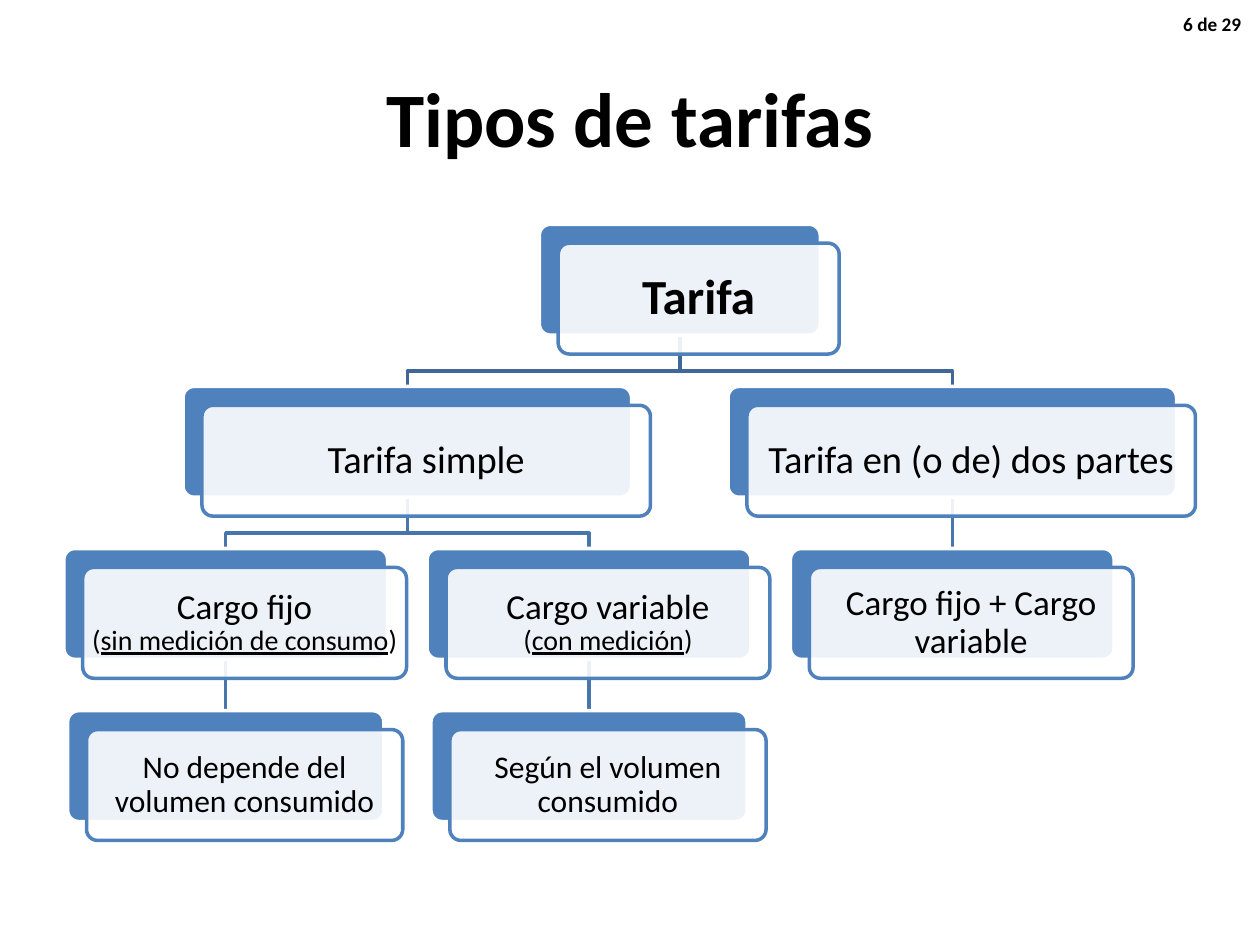
from collections import namedtuple

from lxml import etree
from pptx import Presentation
from pptx.dml.color import RGBColor
from pptx.enum.shapes import MSO_CONNECTOR, MSO_SHAPE
from pptx.enum.text import MSO_ANCHOR, PP_ALIGN
from pptx.oxml.ns import qn
from pptx.util import Inches, Pt

ROUNDED = MSO_SHAPE.ROUNDED_RECTANGLE
STRAIGHT = MSO_CONNECTOR.STRAIGHT
MIDDLE, TOP = MSO_ANCHOR.MIDDLE, MSO_ANCHOR.TOP
CENTER, RIGHT = PP_ALIGN.CENTER, PP_ALIGN.RIGHT

COLORS = {"text": "000000", "card": "4F81BD", "paper": "FFFFFF",
          "branch_top": "3F6797", "branch": "4875AC"}
FONT = "Calibri"
CARD_HEIGHT, CARD_SHIFT = 0.88, 0.15
COLUMNS, ROWS, BEND = 3, 4, 0.7

Box = namedtuple("Box", "left top width height")
Node = namedtuple("Node", "column row width lines size bold side_inset parent",
                  defaults=(False, 0.08, None))

NODES = {
    "tariff": Node(1.25, 0, 2.23, [["Tarifa"]], 28, True),
    "simple": Node(0.5, 1, 3.56, [["Tarifa simple"]], 22, parent="tariff"),
    "fixed": Node(0, 2, 2.57, [["Cargo fijo"],
                  [("(", 16), ("sin medición de consumo", 16, True), (")", 16)]],
                  20, side_inset=0, parent="simple"),
    "fixed_note": Node(0, 3, 2.51, [["No depende del volumen consumido"]], 18,
                       parent="fixed"),
    "variable": Node(1, 2, 2.57, [["Cargo variable"],
                     [("(", 16), ("con medición", 16, True), (")", 16)]],
                     20, parent="simple"),
    "variable_note": Node(1, 3, 2.51, [["Según el volumen consumido"]], 18,
                          parent="variable"),
    "two_part": Node(2, 1, 3.56, [["Tarifa en (o de) dos partes"]], 22,
                     parent="tariff"),
    "combined": Node(2, 2, 2.57, [["Cargo fijo + Cargo variable"]], 20,
                     parent="two_part"),
}


def rgb(name):
    """Return the palette colour with this name."""
    return RGBColor.from_string(COLORS[name])


def emu(*lengths):
    """Convert lengths in inches to slide units."""
    return [Inches(length) for length in lengths]


def write(frame, lines, size, bold=False, align=CENTER, anchor=MIDDLE,
          insets=(0.1, 0.05), spacing=None):
    """Fill a text frame with lines of plain or (text, size, underline) runs."""
    frame.word_wrap = True
    frame.vertical_anchor = anchor
    frame.margin_left = frame.margin_right = Inches(insets[0])
    frame.margin_top = frame.margin_bottom = Inches(insets[1])
    for index, line in enumerate(lines):
        paragraph = frame.add_paragraph() if index else frame.paragraphs[0]
        paragraph.alignment = align
        paragraph.line_spacing = spacing
        for part in line:
            text, run_size, underline = (
                (part, size, False) if isinstance(part, str)
                else (*part, False)[:3])
            run = paragraph.add_run()
            run.text = text
            font = run.font
            font.name, font.size, font.bold = FONT, Pt(run_size), bold
            font.underline = underline
            font.color.rgb = rgb("text")


def add_label(slide, box, text, **style):
    """Place one line of text in a box."""
    label = slide.shapes.add_textbox(*emu(*box))
    write(label.text_frame, [[text]], **style)


def add_panel(slide, box, fill, outline):
    """Place a rounded panel and return it."""
    panel = slide.shapes.add_shape(ROUNDED, *emu(*box))
    panel.shadow.inherit = False
    panel.adjustments[0] = 0.1
    panel.fill.solid()
    panel.fill.fore_color.rgb = rgb(fill)
    panel.line.color.rgb = rgb(outline)
    panel.line.width = Pt(2)
    return panel


def add_card(slide, box, node):
    """Place a solid panel with a translucent text panel shifted over it."""
    add_panel(slide, box, "card", "paper")
    shifted = box._replace(left=box.left + CARD_SHIFT, top=box.top + CARD_SHIFT)
    front = add_panel(slide, shifted, "paper", "card")
    paper = front.fill._xPr.find(qn("a:solidFill"))[0]
    etree.SubElement(paper, qn("a:alpha")).set("val", "90000")
    write(front.text_frame, node.lines, node.size, bold=node.bold,
          insets=(node.side_inset, 0.08), spacing=0.9)


def add_branch(slide, parent_box, child_box, color):
    """Join the bottom of a parent card to the top of a child card."""
    start_x = parent_box.left + parent_box.width / 2
    end_x = child_box.left + child_box.width / 2
    start_y, end_y = parent_box.top + parent_box.height, child_box.top
    if abs(start_x - end_x) < 0.01:
        branch = slide.shapes.add_connector(
            STRAIGHT, *emu(start_x, start_y, end_x, end_y))
        etree.SubElement(branch.line._get_or_add_ln().getparent(),
                         qn("a:effectLst"))
    else:
        bend_y = start_y + BEND * (end_y - start_y)
        builder = slide.shapes.build_freeform(*emu(start_x, start_y))
        builder.add_line_segments(
            [emu(start_x, bend_y), emu(end_x, bend_y), emu(end_x, end_y)],
            close=False)
        branch = builder.convert_to_shape()
        branch.fill.background()
        branch.shadow.inherit = False
    branch.line.color.rgb = rgb(color)
    branch.line.width = Pt(2)


def add_tree(slide, area):
    """Lay out the tariff tree on a grid of columns and rows."""
    column_step = area.width / COLUMNS
    row_step = (area.height - CARD_HEIGHT - CARD_SHIFT) / (ROWS - 1)
    boxes = {
        key: Box(area.left + (node.column + 0.5) * column_step - node.width / 2,
                 area.top + node.row * row_step, node.width, CARD_HEIGHT)
        for key, node in NODES.items()}
    for key, node in reversed(NODES.items()):
        if node.parent:
            color = "branch" if NODES[node.parent].row else "branch_top"
            add_branch(slide, boxes[node.parent], boxes[key], color)
    for key, node in NODES.items():
        add_card(slide, boxes[key], node)


def main():
    """Build and save the slide."""
    deck = Presentation()
    deck.slide_width, deck.slide_height = emu(10, 7.5)
    slide = deck.slides.add_slide(deck.slide_layouts[6])
    add_label(slide, Box(0.5, 0.3, 9, 1.25), "Tipos de tarifas",
              size=44, bold=True)
    add_tree(slide, Box(0.35, 1.78, 8.65, 4.89))
    add_label(slide, Box(9.2, 0.05, 0.75, 0.29), "6 de 29",
              size=11, bold=True, align=RIGHT, anchor=TOP)
    deck.save("out.pptx")


if __name__ == "__main__":
    main()
